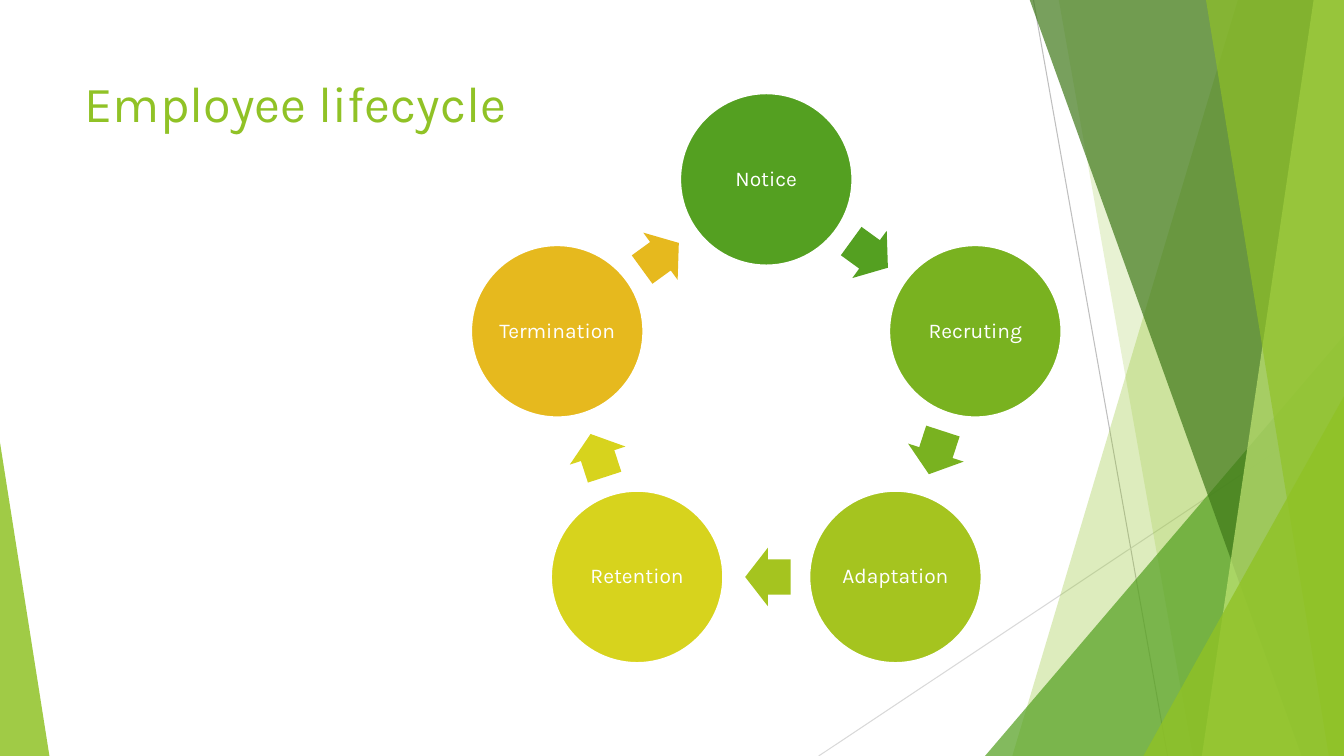
"""Builds the employee lifecycle slide: a five-stage cycle on a faceted green backdrop."""
from dataclasses import dataclass
from math import cos, radians, sin

from lxml.etree import SubElement
from pptx import Presentation
from pptx.dml.color import RGBColor
from pptx.enum.shapes import MSO_CONNECTOR, MSO_SHAPE
from pptx.enum.text import MSO_ANCHOR, MSO_AUTO_SIZE, PP_ALIGN
from pptx.oxml.ns import qn
from pptx.util import Inches, Pt


@dataclass(frozen=True)
class Theme:
    """Colours, font and type sizes of the slide."""
    font: str = "Karla"
    title_size: float = 36
    stage_size: float = 15
    accent: str = "90C226"
    green: str = "54A021"
    dark: str = "3F7819"
    pale: str = "C0E474"
    white: str = "FFFFFF"


THEME = Theme()
WIDTH, HEIGHT, BLEED = 13.33, 7.5, -0.01

TITLE = "Employee lifecycle"
STAGES = [
    ("Notice", "54A021"),
    ("Recruting", "79B220"),
    ("Adaptation", "A5C41F"),
    ("Retention", "D7D31D"),
    ("Termination", "E6B91E"),
]
RAYS = [
    ((10.25, 0), (11.58, HEIGHT), "BFBFBF"),
    ((WIDTH, 4.03), (8.12, HEIGHT), "D9D9D9"),
]
# Bands: top-left x, bottom-left x. Wedges: left, top, width, apex.
FACETS = [
    ("band", (12.28, 10.04), THEME.accent, 30),
    ("band", (10.5, 11.83), THEME.accent, 20),
    ("wedge", (9.77, 3.33, 3.56, 1), THEME.green, 72),
    ("band", (10.21, 12.91), THEME.dark, 70),
    ("band", (13.03, 11.92), THEME.pale, 70),
    ("band", (11.96, 13.18), THEME.accent, 65),
    ("wedge", (11.34, 3.93, 1.99, 1), THEME.accent, 80),
    ("wedge", (0, 4.39, 0.49, 0), THEME.accent, 85),
]

CENTRE_X, CENTRE_Y, ORBIT = 7.6, 3.96, 2.18
DISC, ARROW_W, ARROW_H = 1.71, 0.45, 0.58
ARROW_POSITION = 0.494
STEP = 360 / len(STAGES)


def rgb(colour):
    """Turn a hex string into a colour."""
    return RGBColor.from_string(colour)


def paint(shape, colour, opacity=100):
    """Give a shape a flat fill without outline or shadow."""
    shape.shadow.inherit = False
    shape.fill.solid()
    shape.fill.fore_color.rgb = rgb(colour)
    shape.line.fill.background()
    if opacity < 100:
        swatch = shape._element.spPr.find(qn("a:solidFill"))[0]
        SubElement(swatch, qn("a:alpha"), val=str(opacity * 1000))


def add_centred(shapes, preset, x, y, width, height):
    """Add a preset shape around a centre point."""
    return shapes.add_shape(preset, Inches(x - width / 2), Inches(y - height / 2),
                            Inches(width), Inches(height))


def style_text(paragraph, size, colour):
    """Set the font of a paragraph."""
    paragraph.font.name = THEME.font
    paragraph.font.size = Pt(size)
    paragraph.font.color.rgb = rgb(colour)


def add_backdrop(shapes):
    """Draw the thin rays and the translucent facets."""
    for start, end, colour in RAYS:
        ray = shapes.add_connector(MSO_CONNECTOR.STRAIGHT, *map(Inches, start + end))
        ray.line.color.rgb = rgb(colour)
        ray.line.width = Pt(0.75)
        SubElement(ray._element.spPr, qn("a:effectLst"))
    for kind, geometry, colour, opacity in FACETS:
        if kind == "band":
            top_x, bottom_x = geometry
            outline = shapes.build_freeform(Inches(top_x), Inches(BLEED))
            corners = [(WIDTH, BLEED), (WIDTH, HEIGHT), (bottom_x, HEIGHT)]
            outline.add_line_segments([(Inches(x), Inches(y)) for x, y in corners])
            facet = outline.convert_to_shape()
        else:
            left, top, width, apex = geometry
            facet = shapes.add_shape(MSO_SHAPE.ISOSCELES_TRIANGLE, Inches(left),
                                     Inches(top), Inches(width), Inches(HEIGHT - top))
            facet.adjustments[0] = apex
        paint(facet, colour, opacity)


def stage_centre(index):
    """Return the centre of a stage, clockwise from the top."""
    angle = radians(index * STEP)
    return CENTRE_X + ORBIT * sin(angle), CENTRE_Y - ORBIT * cos(angle)


def add_cycle(shapes):
    """Draw each stage and the arrow to the next one."""
    for index, (label, colour) in enumerate(STAGES):
        x, y = stage_centre(index)
        next_x, next_y = stage_centre(index + 1)
        disc = add_centred(shapes, MSO_SHAPE.OVAL, x, y, DISC, DISC)
        paint(disc, colour)
        disc.line.color.rgb = rgb(THEME.white)
        disc.line.width = Pt(1.5)
        frame = disc.text_frame
        frame.text = label
        frame.word_wrap = False
        frame.vertical_anchor = MSO_ANCHOR.MIDDLE
        frame.margin_left = frame.margin_right = Inches(0.02)
        frame.margin_top = frame.margin_bottom = Inches(0.02)
        caption = frame.paragraphs[0]
        caption.alignment = PP_ALIGN.CENTER
        caption.line_spacing = 0.9
        style_text(caption, THEME.stage_size, THEME.white)

        arrow = add_centred(shapes, MSO_SHAPE.RIGHT_ARROW,
                            x + (next_x - x) * ARROW_POSITION,
                            y + (next_y - y) * ARROW_POSITION, ARROW_W, ARROW_H)
        arrow.adjustments[0] = 0.6
        arrow.adjustments[1] = 0.5
        arrow.rotation = (index + 0.5) * STEP
        paint(arrow, colour)


def add_title(title):
    """Place and format the title placeholder."""
    title.left, title.top = Inches(0.74), Inches(0.67)
    title.width, title.height = Inches(9.4), Inches(1.44)
    frame = title.text_frame
    frame.text = TITLE
    frame.word_wrap = True
    frame.auto_size = MSO_AUTO_SIZE.NONE
    frame.vertical_anchor = MSO_ANCHOR.TOP
    frame.paragraphs[0].alignment = PP_ALIGN.LEFT
    style_text(frame.paragraphs[0], THEME.title_size, THEME.accent)


def main():
    """Build and save the presentation."""
    deck = Presentation()
    deck.slide_width, deck.slide_height = Inches(WIDTH), Inches(HEIGHT)
    slide = deck.slides.add_slide(deck.slide_layouts[5])
    add_title(slide.shapes.title)
    add_backdrop(slide.shapes.add_group_shape().shapes)
    add_cycle(slide.shapes.add_group_shape().shapes)
    deck.save("out.pptx")


if __name__ == "__main__":
    main()
